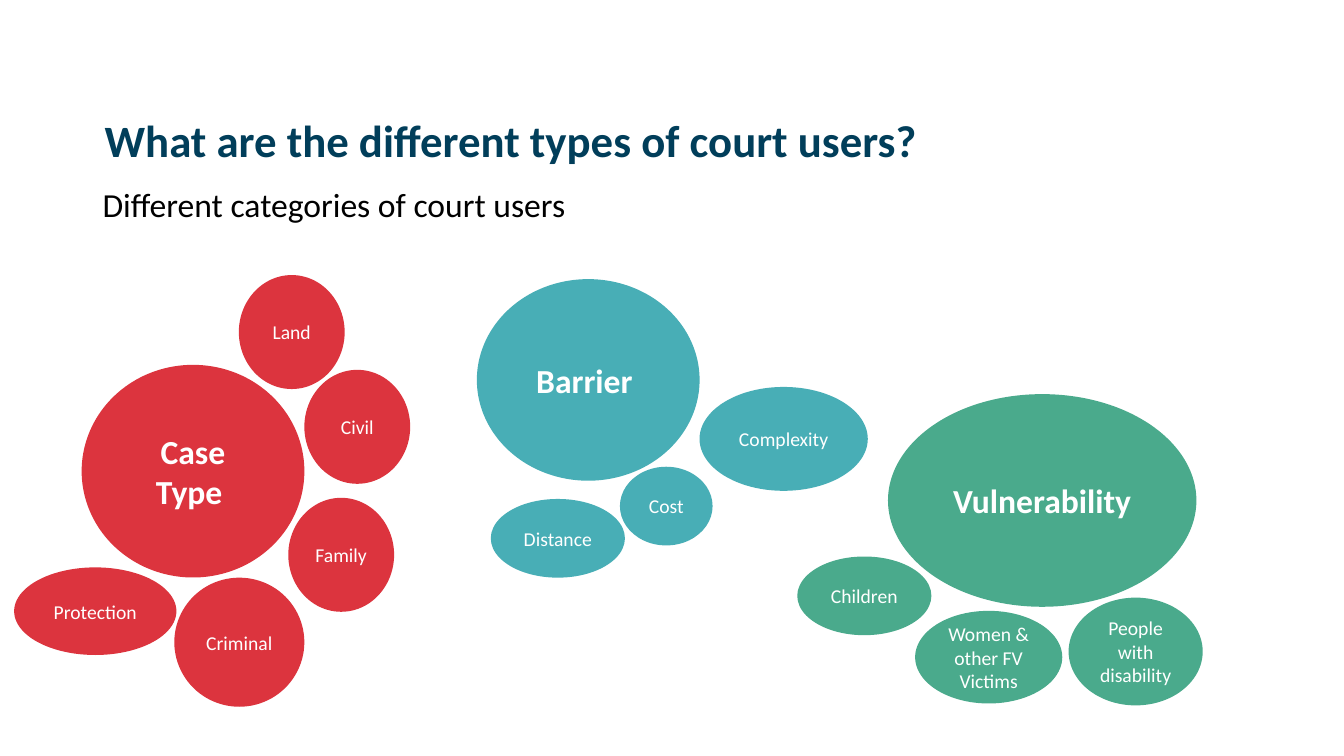
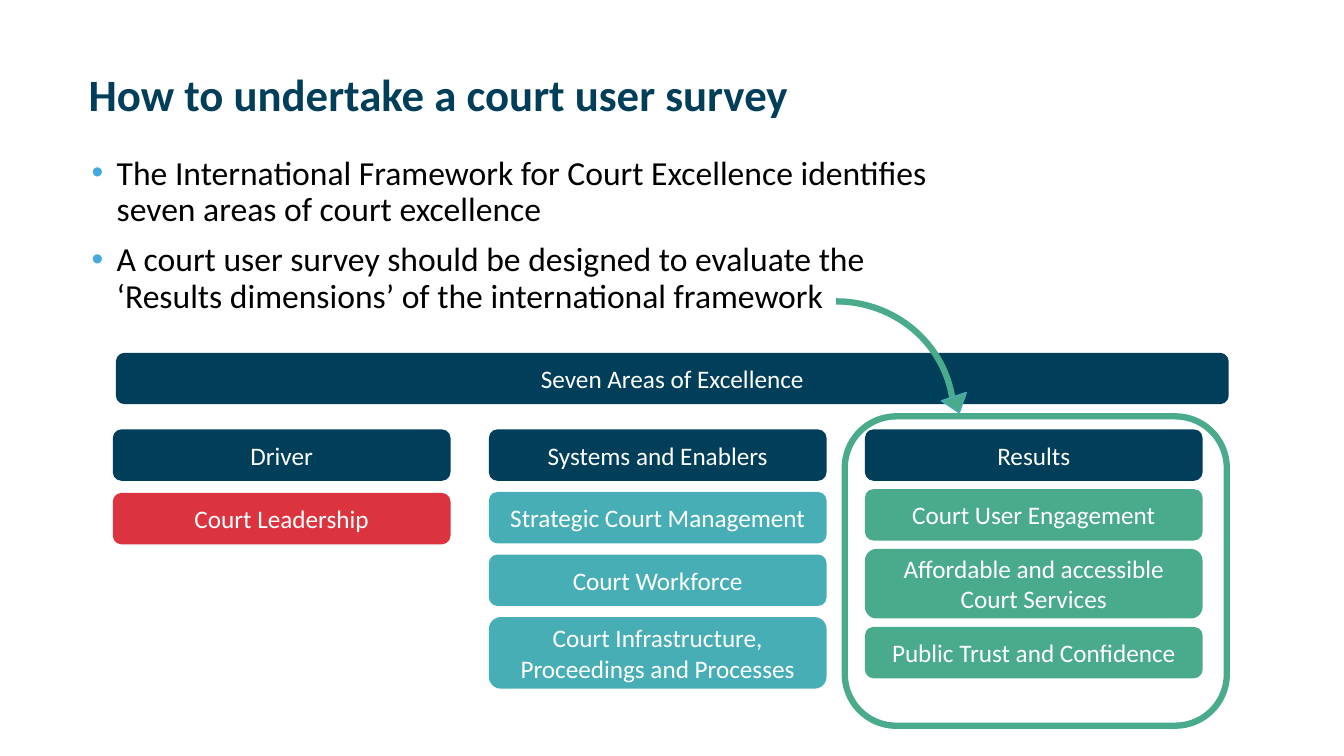
from dataclasses import dataclass

from lxml import etree
from pptx import Presentation
from pptx.dml.color import RGBColor
from pptx.enum.shapes import MSO_SHAPE
from pptx.enum.text import MSO_ANCHOR, PP_ALIGN
from pptx.oxml.ns import qn
from pptx.util import Pt

ELLIPSE = MSO_SHAPE.OVAL
ROUNDED = MSO_SHAPE.ROUNDED_RECTANGLE
ARC = MSO_SHAPE.ARC
TRIANGLE = MSO_SHAPE.ISOSCELES_TRIANGLE
MIDDLE = MSO_ANCHOR.MIDDLE
TOP = MSO_ANCHOR.TOP
CENTER = PP_ALIGN.CENTER
BLANK_LAYOUT = 6


@dataclass(frozen=True)
class Theme:
    font: str = "Calibri"
    navy: str = "013E5A"
    red: str = "DC343E"
    teal: str = "48AEB6"
    green: str = "4AAA8C"
    bullet: str = "45A9DF"
    black: str = "000000"
    white: str = "FFFFFF"
    title_size: float = 32
    body_size: float = 24
    box_size: float = 18
    bubble_size: float = 14
    outline: float = 4.5
    line_spacing: float = 0.9
    paragraph_gap: float = 10
    bullet_indent: float = 18


THEME = Theme()

# Hub and satellite boxes are (left, top, width, height); satellites start from the hub's corner.
CLUSTERS = [
    ("Case Type ", THEME.red, (58.3, 260.6, 159.1, 151.9), [
        ("Criminal", (66.2, 152, 92.9, 92.2)),
        ("Family", (147.6, 95, 75.6, 81.4)),
        ("Protection", (-48.2, 144.7, 115.9, 62.6)),
        ("Civil", (159.1, 3.6, 75.6, 81.4)),
        ("Land", (112.3, -64.1, 75.6, 81.4)),
    ]),
    ("Barrier ", THEME.teal, (340.6, 199.4, 159.1, 144), [
        ("Cost", (102.2, 134, 66.2, 56.2)),
        ("Complexity", (159.1, 77, 120.2, 74.2)),
        ("Distance", (10, 157, 95.8, 56.2)),
    ]),
    ("Vulnerability", THEME.green, (634.3, 281.5, 220.3, 151.9), [
        ("Children", (-64.8, 116, 95.8, 56.2)),
        ("Women & other FV Victims", (19.4, 154.8, 105.1, 66.2)),
        ("People with disability", (129, 145.4, 95.8, 77)),
    ]),
]

ROW_HEIGHT = 36.7
COLUMN_WIDTH = 241.2
COLUMN_PITCH = 268.6

# Heading, colour, gap between boxes, boxes as (text, height).
COLUMNS = [
    ("Driver", THEME.red, 8.7, [("Court Leadership", ROW_HEIGHT)]),
    ("Systems and Enablers", THEME.teal, 8, [
        ("Strategic Court Management", ROW_HEIGHT),
        ("Court Workforce", ROW_HEIGHT),
        ("Court Infrastructure, Proceedings and Processes", 51.1),
    ]),
    ("Results", THEME.green, 6, [
        ("Court User Engagement", ROW_HEIGHT),
        ("Affordable and accessible Court Services", 49.7),
        ("Public Trust and Confidence", ROW_HEIGHT),
    ]),
]


def in_points(box):
    return [Pt(length) for length in box]


def format_runs(paragraph, size, color, bold=False):
    for run in paragraph.runs:
        run.font.name = THEME.font
        run.font.size = Pt(size)
        run.font.bold = bold
        run.font.color.rgb = RGBColor.from_string(color)


def add_bullet(paragraph):
    properties = paragraph._p.get_or_add_pPr()
    properties.set("marL", str(Pt(THEME.bullet_indent)))
    properties.set("indent", str(-Pt(THEME.bullet_indent)))
    color = etree.SubElement(properties, qn("a:buClr"))
    etree.SubElement(color, qn("a:srgbClr"), val=THEME.bullet)
    etree.SubElement(properties, qn("a:buFont"), typeface="Arial")
    etree.SubElement(properties, qn("a:buChar"), char="•")


def add_text(slide, box, lines, size, color, bold=False, anchor=TOP, bulleted=False):
    frame = slide.shapes.add_textbox(*in_points(box)).text_frame
    frame.word_wrap = True
    frame.vertical_anchor = anchor
    frame.text = "\n".join(lines)
    for index, paragraph in enumerate(frame.paragraphs):
        if bulleted:
            add_bullet(paragraph)
        paragraph.line_spacing = THEME.line_spacing
        if index:
            paragraph.space_before = Pt(THEME.paragraph_gap)
        format_runs(paragraph, size, color, bold)


def add_heading_and_body(slide, title_box, title, body_box, lines, bulleted=False):
    add_text(slide, title_box, [title], THEME.title_size, THEME.navy, bold=True, anchor=MIDDLE)
    add_text(slide, body_box, lines, THEME.body_size, THEME.black, bulleted=bulleted)


def add_plain_shape(slide, kind, box, fill=None, line=None, line_width=1):
    shape = slide.shapes.add_shape(kind, *in_points(box))
    shape.shadow.inherit = False
    if fill:
        shape.fill.solid()
        shape.fill.fore_color.rgb = RGBColor.from_string(fill)
    else:
        shape.fill.background()
    if line:
        shape.line.color.rgb = RGBColor.from_string(line)
        shape.line.width = Pt(line_width)
    else:
        shape.line.fill.background()
    return shape


def add_label(slide, kind, box, text, fill, size, bold=False):
    frame = add_plain_shape(slide, kind, box, fill).text_frame
    frame.word_wrap = True
    frame.vertical_anchor = MIDDLE
    frame.text = text
    paragraph = frame.paragraphs[0]
    paragraph.alignment = CENTER
    format_runs(paragraph, size, THEME.white, bold)


def add_cluster(slide, hub_box, hub, color, satellites):
    """Place a hub ellipse and the satellites measured from its top left corner."""
    add_label(slide, ELLIPSE, hub_box, hub, color, THEME.body_size, bold=True)
    for text, (left, top, width, height) in satellites:
        box = (hub_box[0] + left, hub_box[1] + top, width, height)
        add_label(slide, ELLIPSE, box, text, color, THEME.bubble_size)


def add_column(slide, left, top, heading, color, gap, items):
    boxes = [(heading, ROW_HEIGHT, THEME.navy)]
    boxes += [(text, height, color) for text, height in items]
    for text, height, fill in boxes:
        add_label(slide, ROUNDED, (left, top, COLUMN_WIDTH, height), text, fill, THEME.box_size)
        top += height + gap


def add_framework(slide, left, top, width):
    """Place the banner and, below it, the three columns."""
    add_label(slide, ROUNDED, (left, top, width, ROW_HEIGHT), "Seven Areas of Excellence",
              THEME.navy, THEME.box_size)
    for index, column in enumerate(COLUMNS):
        add_column(slide, left - 2.2 + index * COLUMN_PITCH, top + 54.7, *column)


def add_curved_arrow(slide, left, top, width, height):
    """Draw a quarter arc inside the box's upper right quadrant, ending in a triangle."""
    arc = add_plain_shape(slide, ARC, (left, top, width, height),
                          line=THEME.green, line_width=THEME.outline)
    arc.adjustments[0] = 162
    arc.adjustments[1] = 212.87
    head_box = (left + width - 7.3, top + 67.7, 18.7, 12.2)
    head = add_plain_shape(slide, TRIANGLE, head_box, THEME.green, THEME.teal)
    head.rotation = 161.4


def build_user_types(slide):
    add_heading_and_body(
        slide,
        (67.7, 49.7, 628.6, 104.4), "What are the different types of court users?",
        (66.2, 131, 628.6, 303.8), ["Different categories of court users"])
    for hub, color, hub_box, satellites in CLUSTERS:
        add_cluster(slide, hub_box, hub, color, satellites)


def build_survey(slide):
    add_heading_and_body(
        slide,
        (56.2, 17.3, 628.6, 104.4), "How to undertake a court user survey",
        (58.3, 108, 628.6, 303.8),
        ["The International Framework for Court Excellence identifies seven areas of court excellence",
         "A court user survey should be designed to evaluate the ‘Results dimensions’ "
         "of the international framework"],
        bulleted=True)
    add_framework(slide, 82.8, 252, 794.9)
    add_curved_arrow(slide, 513.4, 215.3, 167.8, 162.7)
    add_plain_shape(slide, ROUNDED, (603.4, 297.4, 272.9, 221),
                    line=THEME.green, line_width=THEME.outline)


def main():
    presentation = Presentation()
    presentation.slide_width = Pt(960)
    presentation.slide_height = Pt(540)
    layout = presentation.slide_layouts[BLANK_LAYOUT]
    for build in (build_user_types, build_survey):
        build(presentation.slides.add_slide(layout))
    presentation.save("out.pptx")


if __name__ == "__main__":
    main()
